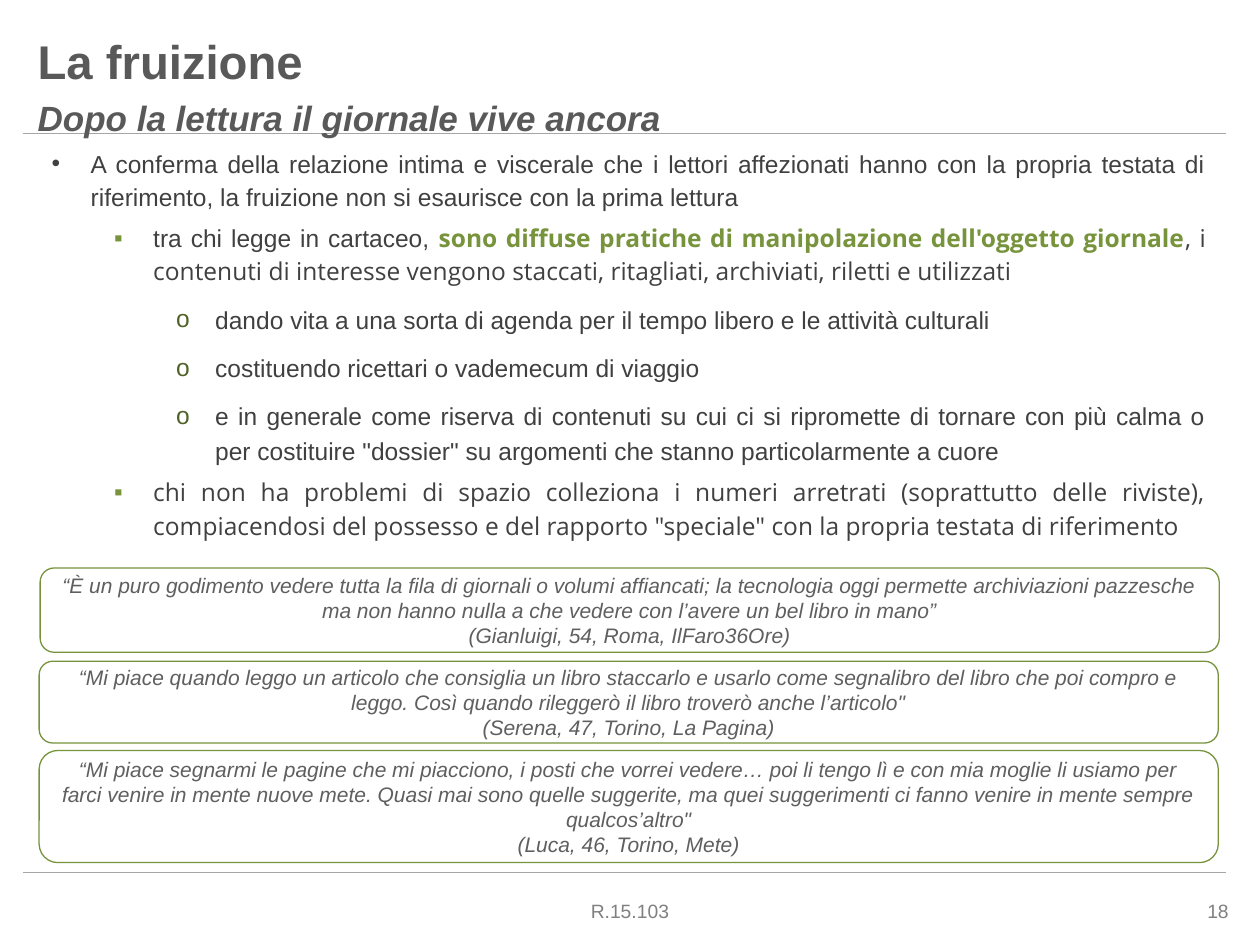
from lxml import etree
from pptx import Presentation
from pptx.dml.color import RGBColor
from pptx.enum.shapes import MSO_CONNECTOR, MSO_SHAPE
from pptx.enum.text import MSO_ANCHOR, PP_ALIGN
from pptx.oxml.ns import qn
from pptx.util import Cm, Pt

LEFT, CENTER, RIGHT = PP_ALIGN.LEFT, PP_ALIGN.CENTER, PP_ALIGN.RIGHT
JUSTIFY, MIDDLE = PP_ALIGN.JUSTIFY, MSO_ANCHOR.MIDDLE
ROUNDED, STRAIGHT = MSO_SHAPE.ROUNDED_RECTANGLE, MSO_CONNECTOR.STRAIGHT

WHITE = RGBColor(0xFF, 0xFF, 0xFF)
GREEN = RGBColor(0x77, 0x93, 0x3C)
DARK_GREEN = RGBColor(0x4F, 0x62, 0x28)
RULE_GRAY = RGBColor(0xA6, 0xA6, 0xA6)
TITLE_GRAY = RGBColor(0x59, 0x59, 0x59)
BODY_GRAY = RGBColor(0x40, 0x40, 0x40)
QUOTE_GRAY = RGBColor(0x5F, 0x5F, 0x5F)
FOOTER_GRAY = RGBColor(0x80, 0x80, 0x80)

SANS, OPEN = "Arial", "Open Sans"

# Outline level: bullet, its colour, left margin, line spacing, space before
LEVELS = [
    ("•", BODY_GRAY, Cm(0.79), Pt(19.2), Pt(0)),
    ("▪", GREEN, Cm(2.05), Pt(19.2), Pt(0)),
    ("o", DARK_GREEN, Cm(3.3), 1.2, Pt(3.4)),
]
HANGING = Cm(0.79)

# Each point: level, then its (text, format) runs
POINTS = [
    (0, [("A conferma della relazione intima e viscerale che i lettori affezionati "
          "hanno con la propria testata di riferimento, la fruizione non si "
          "esaurisce con la prima lettura", {})]),
    (1, [("tra chi legge in cartaceo, ", {}),
         ("sono diffuse pratiche di manipolazione dell'oggetto giornale",
          {"font": OPEN, "color": GREEN, "bold": True}),
         (", i contenuti di interesse vengono staccati, ritagliati, archiviati, "
          "riletti e utilizzati", {"font": OPEN})]),
    (2, [("dando vita a una sorta di agenda per il tempo libero e le attività "
          "culturali", {})]),
    (2, [("costituendo ricettari o vademecum di viaggio", {})]),
    (2, [("e in generale come riserva di contenuti su cui ci si ripromette di "
          "tornare con più calma o per costituire \"dossier\" su argomenti che "
          "stanno particolarmente a cuore", {})]),
    (1, [("chi non ha problemi di spazio colleziona i numeri arretrati "
          "(soprattutto delle riviste), compiacendosi del possesso e del rapporto "
          "\"speciale\" con la propria testata di riferimento", {"font": OPEN})]),
]

# Each quote: left, top, height in cm, words, speaker
QUOTES = [
    (0.81, 11.45, 1.7,
     "“È un puro godimento vedere tutta la fila di giornali o volumi affiancati; "
     "la tecnologia oggi permette archiviazioni pazzesche ma non hanno nulla a che "
     "vedere con l’avere un bel libro in mano”",
     "(Gianluigi, 54, Roma, IlFaro36Ore)"),
    (0.79, 13.33, 1.65,
     "“Mi piace quando leggo un articolo che consiglia un libro staccarlo e usarlo "
     "come segnalibro del libro che poi compro e leggo. Così quando rileggerò il "
     "libro troverò anche l’articolo\"",
     "(Serena, 47, Torino, La Pagina)"),
    (0.79, 15.13, 2.26,
     "“Mi piace segnarmi le pagine che mi piacciono, i posti che vorrei vedere… poi "
     "li tengo lì e con mia moglie li usiamo per farci venire in mente nuove mete. "
     "Quasi mai sono quelle suggerite, ma quei suggerimenti ci fanno venire in mente "
     "sempre qualcos’altro\"",
     "(Luca, 46, Torino, Mete)"),
]


def add_text(paragraph, text, size=14, font=SANS, color=BODY_GRAY, bold=False,
             italic=False, align=LEFT):
    paragraph.alignment = align
    run = paragraph.add_run()
    run.text = text
    run.font.size = Pt(size)
    run.font.name = font
    run.font.color.rgb = color
    run.font.bold = bold
    run.font.italic = italic


def next_paragraph(frame):
    first = frame.paragraphs[0]
    return first if not first.runs else frame.add_paragraph()


def add_frame(slide, left, top, width, height):
    box = slide.shapes.add_textbox(Cm(left), Cm(top), Cm(width), Cm(height))
    box.text_frame.word_wrap = True
    return box.text_frame


def add_rule(slide, y):
    rule = slide.shapes.add_connector(STRAIGHT, Cm(0.46), Cm(y), Cm(24.71), Cm(y))
    rule.line.color.rgb = RULE_GRAY
    rule.line.width = Pt(0.5)
    etree.SubElement(rule.line._get_or_add_ln().getparent(), qn("a:effectLst"))


def set_bullet(paragraph, char, color, margin):
    props = paragraph._p.get_or_add_pPr()
    props.set("marL", str(margin))
    props.set("indent", str(-HANGING))
    bullet_color = etree.SubElement(props, qn("a:buClr"))
    etree.SubElement(bullet_color, qn("a:srgbClr"), val=str(color))
    etree.SubElement(props, qn("a:buFont"), typeface=SANS)
    etree.SubElement(props, qn("a:buChar"), char=char)


def add_point(frame, level, runs):
    char, color, margin, spacing, before = LEVELS[level]
    paragraph = next_paragraph(frame)
    set_bullet(paragraph, char, color, margin)
    paragraph.level = level
    paragraph.line_spacing = spacing
    paragraph.space_before = before
    paragraph.space_after = Pt(4)
    for text, style in runs:
        add_text(paragraph, text, align=JUSTIFY, **style)


def add_quote(slide, left, top, height, words, speaker):
    card = slide.shapes.add_shape(ROUNDED, Cm(left), Cm(top), Cm(23.77), Cm(height))
    card.shadow.inherit = False
    card.fill.solid()
    card.fill.fore_color.rgb = WHITE
    card.line.color.rgb = GREEN
    card.line.width = Pt(0.75)
    frame = card.text_frame
    frame.word_wrap = True
    frame.vertical_anchor = MIDDLE
    for text in (words, speaker):
        add_text(next_paragraph(frame), text, size=12, color=QUOTE_GRAY,
                 italic=True, align=CENTER)


def main():
    prs = Presentation()
    prs.slide_width, prs.slide_height = Cm(25.4), Cm(19.05)
    slide = prs.slides.add_slide(prs.slide_layouts[6])

    # Rules and footer
    for y in (2.69, 17.58):
        add_rule(slide, y)
    for left, width, text, align in ((21.74, 3.28, "18", RIGHT),
                                     (0, 25.4, "R.15.103", CENTER)):
        footer = add_frame(slide, left, 18.01, width, 0.74)
        add_text(next_paragraph(footer), text, size=11, color=FOOTER_GRAY, align=align)

    # Title and subtitle
    heading = add_frame(slide, 0.51, 0.53, 21.82, 2.08)
    add_text(next_paragraph(heading), "La fruizione", size=27, color=TITLE_GRAY,
             bold=True)
    subtitle = next_paragraph(heading)
    subtitle.space_before = Pt(4)
    add_text(subtitle, "Dopo la lettura il giornale vive ancora", size=20,
             color=TITLE_GRAY, bold=True, italic=True)

    # Outline
    outline = add_frame(slide, 0.79, 2.79, 23.77, 12.78)
    for level, runs in POINTS:
        add_point(outline, level, runs)

    # Reader quotes
    for quote in QUOTES:
        add_quote(slide, *quote)

    prs.save("out.pptx")


if __name__ == "__main__":
    main()
